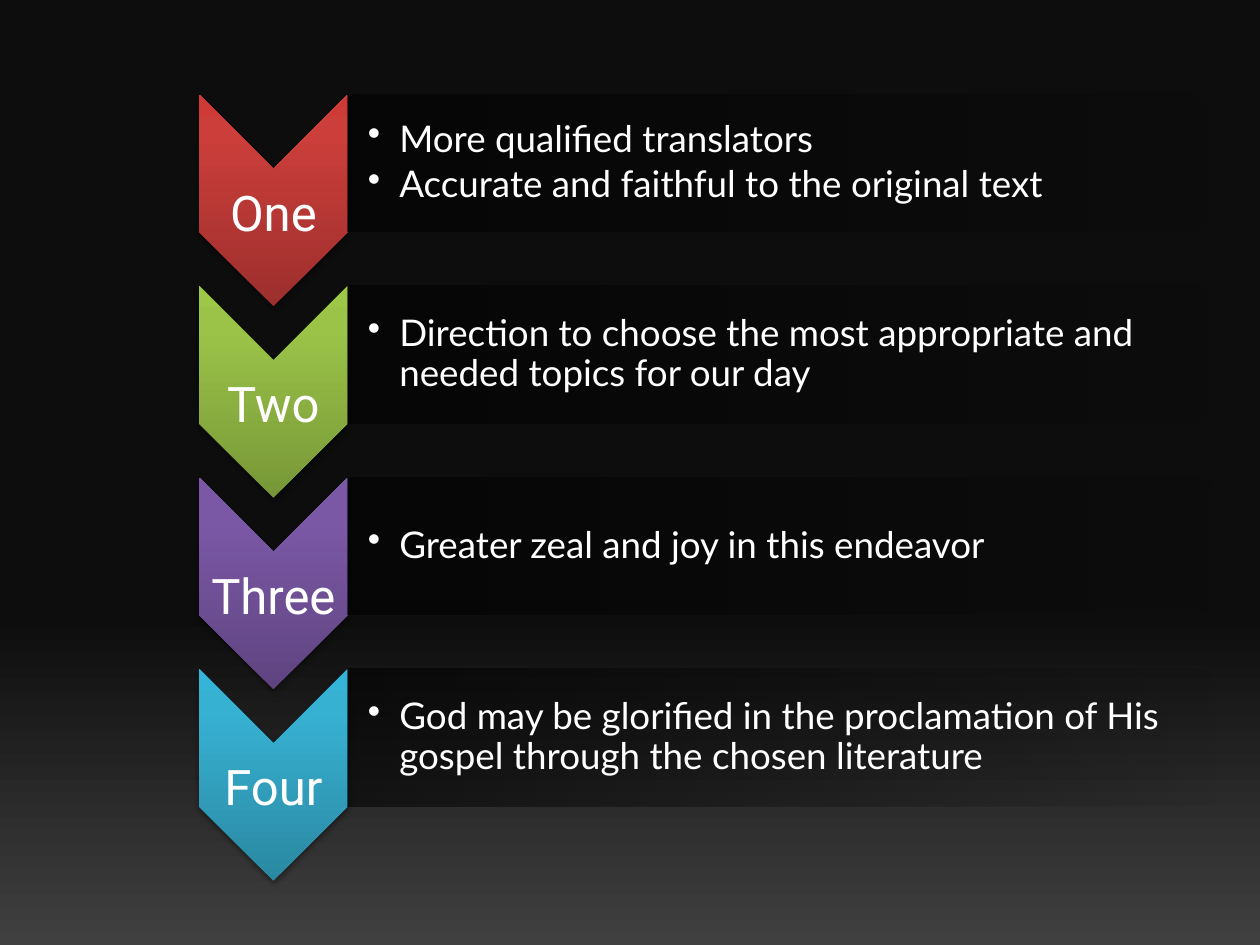
from lxml.etree import SubElement
from pptx import Presentation
from pptx.dml.color import RGBColor
from pptx.enum.shapes import MSO_SHAPE
from pptx.enum.text import MSO_ANCHOR, PP_ALIGN
from pptx.oxml.ns import qn
from pptx.util import Inches, Pt

ROWS = [
    ("One", ("9C2F2D", "CB3E3A", "CE3B37"),
     ["More qualified translators", "Accurate and faithful to the original text"]),
    ("Two", ("779737", "9BC348", "9DC746"),
     ["Direction to choose the most appropriate and needed topics for our day"]),
    ("Three", ("5F4480", "7B58A6", "7C57A8"),
     ["Greater zeal and joy in this endeavor"]),
    ("Four", ("2A88A2", "37B1D2", "34B4D6"),
     ["God may be glorified in the proclamation of His gospel through the chosen literature"]),
]
THEME = {
    "text": "FFFFFF",
    "label": ("Roboto", 28),
    "body": ("Lato", 21),
    "background": [(0, "0D0D0D", 100), (65, "0D0D0D", 100), (100, "404040", 100)],
    "panel": [(0, "000000", 0), (100, "000000", 55)],
}
TOP, PITCH = 0.75, 1.52
CHEVRON_X, CHEVRON_W, CHEVRON_H = 1.58, 1.18, 1.68
PANEL_X, PANEL_W, PANEL_H = 2.76, 6.91, 1.09


def add(parent, tag, **attrs):
    return SubElement(parent, qn(tag), {k: str(v) for k, v in attrs.items()})


def set_gradient(fill, element, stops, angle, turns=1):
    fill.gradient()
    grad = element.xpath(".//a:gradFill")[0]
    for child in list(grad):
        grad.remove(child)
    grad.set("rotWithShape", str(turns))
    gs_list = add(grad, "a:gsLst")
    for pos, color, opacity in stops:
        gs = add(gs_list, "a:gs", pos=pos * 1000)
        clr = add(gs, "a:srgbClr", val=color)
        if opacity < 100:
            add(clr, "a:alpha", val=opacity * 1000)
    add(grad, "a:lin", ang=angle * 60000, scaled=0)


def add_turned(s, kind, x, y, w, h):
    sp = s.shapes.add_shape(kind, Inches(x + (w - h) / 2), Inches(y + (h - w) / 2),
                            Inches(h), Inches(w))
    sp.rotation = 90
    sp.shadow.inherit = False
    sp.line.fill.background()
    return sp


def add_shadow(sp):
    effects = sp.element.spPr.find(qn("a:effectLst"))
    shadow = add(effects, "a:outerShdw", blurRad=Pt(3.1), dist=Pt(1.8),
                 dir=5400000, rotWithShape=0)
    add(add(shadow, "a:srgbClr", val="000000"), "a:alpha", val=35000)


def add_text(s, lines, box, insets, anchor, style, bullets=False):
    tf = s.shapes.add_textbox(*map(Inches, box)).text_frame
    tf.word_wrap = True
    tf.vertical_anchor = anchor
    tf.margin_left, tf.margin_top, tf.margin_right, tf.margin_bottom = map(Inches, insets)
    for i, line in enumerate(lines):
        p = tf.add_paragraph() if i else tf.paragraphs[0]
        p.line_spacing = 0.9
        if bullets:
            p.space_after = Pt(3.4)
            pPr = p._p.get_or_add_pPr()
            pPr.set("marL", str(Inches(0.25)))
            pPr.set("indent", str(Inches(-0.25)))
            add(pPr, "a:buChar", char="•")
        else:
            p.alignment = PP_ALIGN.CENTER
        r = p.add_run()
        r.text = line
        r.font.name, size = style
        r.font.size = Pt(size)
        r.font.color.rgb = RGBColor.from_string(THEME["text"])


def main():
    prs = Presentation()
    prs.slide_width, prs.slide_height = Inches(10), Inches(7.5)
    s = prs.slides.add_slide(prs.slide_layouts[6])
    set_gradient(s.background.fill, s.element, THEME["background"], 90)

    for i, (label, colors, points) in enumerate(ROWS):
        y = TOP + i * PITCH
        chevron = add_turned(s, MSO_SHAPE.CHEVRON, CHEVRON_X, y, CHEVRON_W, CHEVRON_H)
        stops = [(pos, color, 100) for pos, color in zip((0, 80, 100), colors)]
        set_gradient(chevron.fill, chevron.element, stops, 270, turns=0)
        add_shadow(chevron)
        add_text(s, [label], (CHEVRON_X, y + 0.58, CHEVRON_W, 0.5), (0, 0.6, 0, 0),
                 MSO_ANCHOR.BOTTOM, THEME["label"])

        panel = add_turned(s, MSO_SHAPE.ROUND_2_SAME_RECTANGLE, PANEL_X, y, PANEL_W, PANEL_H)
        set_gradient(panel.fill, panel.element, THEME["panel"], 90)
        add_text(s, points, (PANEL_X, y + 0.05, PANEL_W - 0.05, PANEL_H - 0.1),
                 (0.16, 0.01, 0.01, 0.01), MSO_ANCHOR.MIDDLE, THEME["body"], bullets=True)

    prs.save("out.pptx")


if __name__ == "__main__":
    main()
